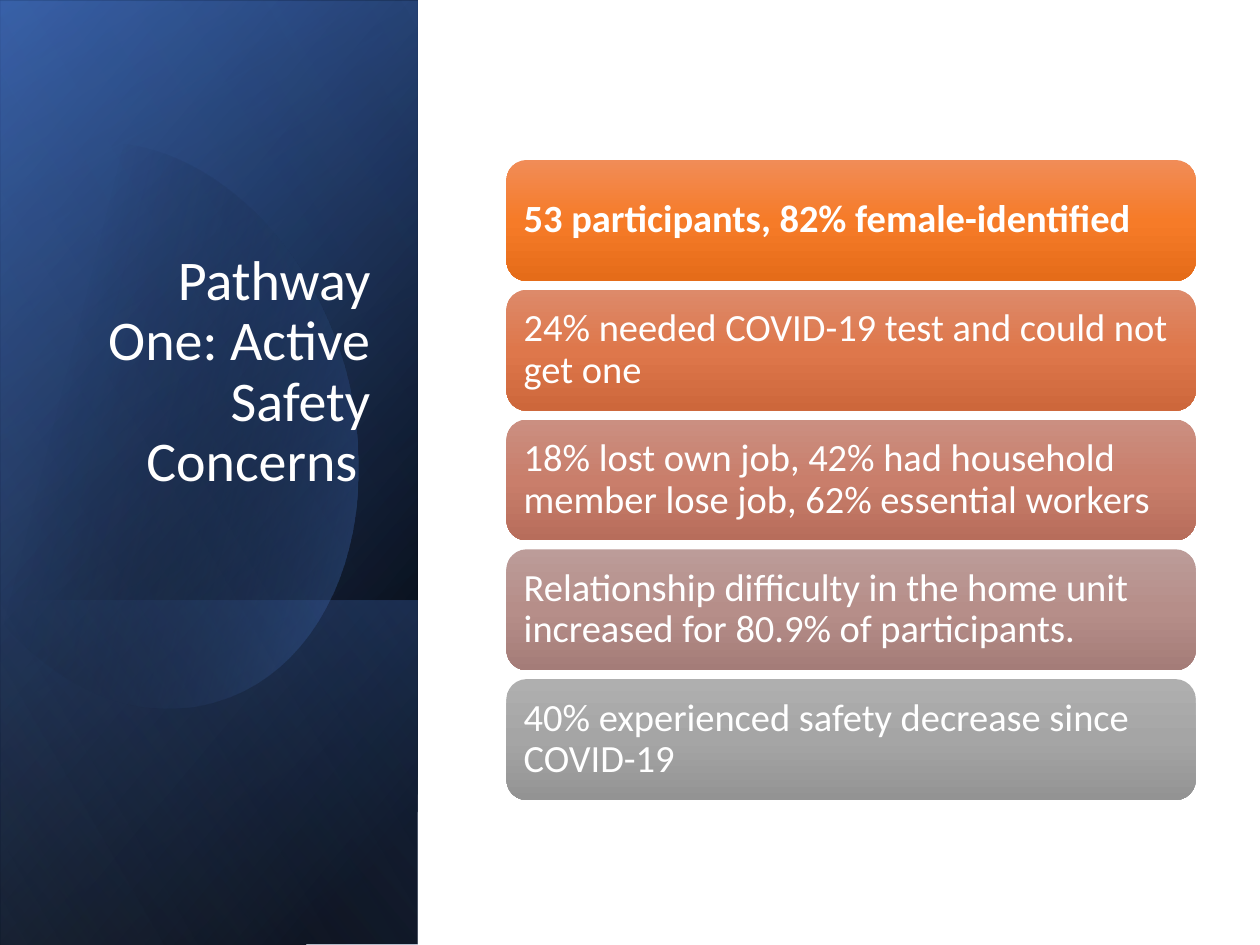
from pptx import Presentation
from pptx.dml.color import RGBColor
from pptx.enum.shapes import MSO_SHAPE as Form
from pptx.enum.text import MSO_ANCHOR as Anchor, MSO_AUTO_SIZE as Fit, PP_ALIGN as Align
from pptx.oxml import parse_xml
from pptx.oxml.ns import nsdecls, qn
from pptx.util import Inches, Pt

# Content
TITLE = "Pathway One: Active Safety Concerns "
BARS = [
    ("53 participants, 82% female-identified", ("F18C57", "F67B28", "E56C19")),
    ("24% needed COVID-19 test and could not get one", ("DD8A6A", "DE774B", "CD673B")),
    ("18% lost own job, 42% had household member lose job, 62% essential workers",
     ("CB8F81", "C97E6B", "B76D5B")),
    ("Relationship difficulty in the home unit increased for 80.9% of participants.",
     ("BC9C99", "B68E89", "A47C78")),
    ("40% experienced safety decrease since COVID-19", ("AFAFAF", "A5A5A5", "939393")),
]

# Side panel layers: box before rotation, angle, stops of (place, colour, opacity)
LAYERS = [
    ((-2.09, 2.09, 7.5, 3.31), 50, [(8, "000000", 100), (100, "2F5597", 100)]),
    ((-2.09, 2.11, 7.5, 3.31), 30, [(0, "000000", 0), (99, "4472C4", 46)]),
    ((0.29, 4.48, 2.74, 3.31), 130, [(2, "4472C4", 29), (100, "000000", 30)]),
]
SHEEN = ((-2.09, 2.09, 7.5, 3.31), 120, [(0, "000000", 0), (99, "8FAADC", 11)])

# Round glow: each step is one end point, or two handles and an end point
START = (0.96, 1.14)
STEPS = [
    [(1.71, 1.22), (2.44, 1.92), (2.73, 2.9)],
    [(3.07, 4.12), (2.62, 5.31), (1.71, 5.57)],
    [(1.14, 5.74), (0.53, 5.5), (0.07, 5)],
    [(-0.03, 4.88)],
    [(-0.25, 1.66)],
    [(-0.15, 1.54)],
    [(0.02, 1.37), (0.22, 1.25), (0.45, 1.18)],
    [(0.62, 1.13), (0.79, 1.12), START],
]
GLOW = [(29, "000000", 0), (100, "4472C4", 43)]


def color(code):
    return RGBColor.from_string(code)


def shade(shape, angle, stops):
    """Give a shape a linear gradient, no line and no shadow."""
    shape.shadow.inherit = False
    shape.line.fill.background()
    shape.fill.background()
    marks = "".join(
        f'<a:gs pos="{place * 1000}"><a:srgbClr val="{code}">'
        f'<a:alpha val="{alpha * 1000}"/></a:srgbClr></a:gs>'
        for place, code, alpha in stops)
    grad = parse_xml(
        f'<a:gradFill {nsdecls("a")} rotWithShape="1"><a:gsLst>{marks}</a:gsLst>'
        f'<a:lin ang="{angle * 60000}" scaled="0"/></a:gradFill>')
    props = shape.element.spPr
    props.replace(props.find(qn("a:noFill")), grad)


def write(shape, text, size, bold=False, align=Align.LEFT, anchor=Anchor.MIDDLE,
          pad=0.09, foot=0.09):
    frame = shape.text_frame
    frame.word_wrap = True
    frame.auto_size = Fit.NONE
    frame.vertical_anchor = anchor
    frame.margin_left = frame.margin_right = frame.margin_top = Inches(pad)
    frame.margin_bottom = Inches(foot)
    para = frame.paragraphs[0]
    para.alignment = align
    para.line_spacing = 0.9
    run = para.add_run()
    run.text = text
    run.font.name = "Calibri"
    run.font.size = Pt(size)
    run.font.bold = bold
    run.font.color.rgb = color("FFFFFF")


def layer(shapes, box, angle, stops):
    rect = shapes.add_shape(Form.RECTANGLE, *map(Inches, box))
    rect.rotation = 90
    rect.element.spPr.find(qn("a:xfrm")).set("flipH", "1")
    shade(rect, angle, stops)


def trace(start, steps, count=24):
    """Turn lines and curves into a list of points."""
    points, last = [], start
    for step in steps:
        if len(step) == 1:
            points += step
        else:
            one, two, end = step
            for i in range(1, count + 1):
                t = i / count
                u = 1 - t
                points.append(tuple(
                    u**3 * a + 3 * u * u * t * b + 3 * u * t * t * c + t**3 * d
                    for a, b, c, d in zip(last, one, two, end)))
        last = step[-1]
    return points


def main():
    deck = Presentation()
    deck.slide_width, deck.slide_height = Inches(10), Inches(7.5)
    slide = deck.slides.add_slide(deck.slide_layouts[5])
    shapes = slide.shapes

    # Side panel
    for item in LAYERS:
        layer(shapes, *item)
    pen = shapes.build_freeform(*map(Inches, START))
    pen.add_line_segments([tuple(map(Inches, p)) for p in trace(START, STEPS)])
    shade(pen.convert_to_shape(), 14, GLOW)
    layer(shapes, *SHEEN)

    # Title, brought in front of the panel
    title = shapes.title
    title.left, title.top, title.width, title.height = map(Inches, (0.48, 1.84, 2.56, 2.62))
    write(title, TITLE, 32, align=Align.RIGHT, anchor=Anchor.BOTTOM, pad=0.1, foot=0.54)
    shapes.element.append(title.element)

    # Bars
    left, top, width, height, pitch = 4.02, 1.27, 5.47, 0.96, 1.03
    for i, (text, codes) in enumerate(BARS):
        box = (left, top + i * pitch, width, height)
        bar = shapes.add_shape(Form.ROUNDED_RECTANGLE, *map(Inches, box))
        shade(bar, 90, [(50 * k, code, 100) for k, code in enumerate(codes)])
        write(bar, text, 22, bold=i == 0)

    deck.save("out.pptx")


if __name__ == "__main__":
    main()
